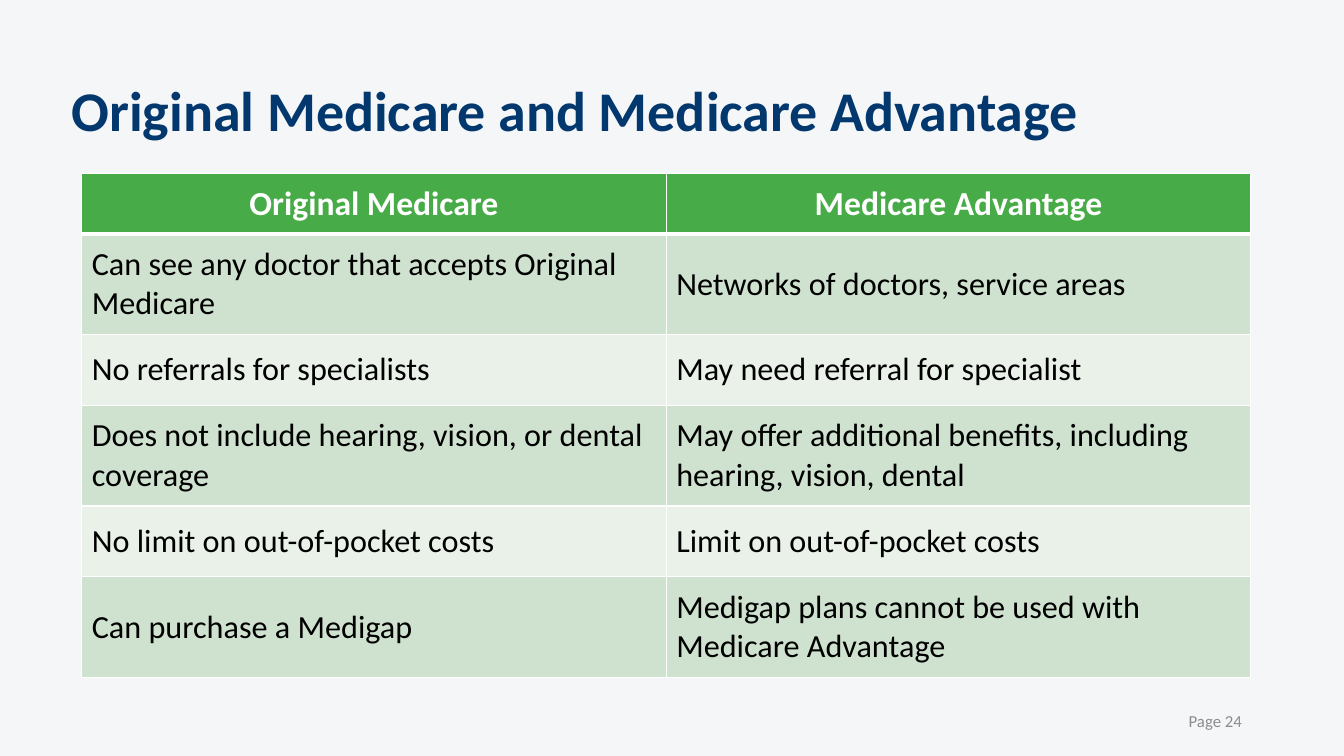
"""Build a slide comparing Original Medicare with Medicare Advantage."""

from dataclasses import dataclass

import lxml.etree
import pptx
import pptx.dml.color
import pptx.enum.text
import pptx.oxml.ns
import pptx.util

Cm = pptx.util.Cm
Pt = pptx.util.Pt
Align = pptx.enum.text.PP_ALIGN
Anchor = pptx.enum.text.MSO_ANCHOR

FONT = "Calibri"
COLORS = {
    "background": "F5F6F8",
    "title": "03386E",
    "page": "8C8C8C",
    "header": "47AB47",
    "header_text": "FFFFFF",
    "band_dark": "CFE2CF",
    "band_light": "E9F1E9",
    "body_text": "000000",
    "border": "FFFFFF",
}


@dataclass(frozen=True)
class TextStyle:
    """Describe the look of a run and its paragraph."""

    size: float
    color: str
    bold: bool = False
    align: Align = Align.LEFT


@dataclass(frozen=True)
class ComparisonRow:
    """Hold one row of the comparison table."""

    original: str
    advantage: str
    height: float


TITLE_STYLE = TextStyle(40, "title", bold=True)
PAGE_STYLE = TextStyle(12, "page", align=Align.RIGHT)
HEADER_STYLE = TextStyle(24, "header_text", bold=True, align=Align.CENTER)
BODY_STYLE = TextStyle(23, "body_text")
COLUMN_WIDTH = 14.73
ROWS = [
    ComparisonRow("Original Medicare", "Medicare Advantage", 1.52),
    ComparisonRow("Can see any doctor that accepts Original Medicare",
                  "Networks of doctors, service areas", 2.54),
    ComparisonRow("No referrals for specialists", "May need referral for specialist", 1.78),
    ComparisonRow("Does not include hearing, vision, or dental coverage",
                  "May offer additional benefits, including hearing, vision, dental", 2.54),
    ComparisonRow("No limit on out-of-pocket costs", "Limit on out-of-pocket costs", 1.78),
    ComparisonRow("Can purchase a Medigap",
                  "Medigap plans cannot be used with Medicare Advantage", 2.54),
]


def color_of(name: str) -> pptx.dml.color.RGBColor:
    """Return the named colour."""
    return pptx.dml.color.RGBColor.from_string(COLORS[name])


def write_text(text_frame: pptx.text.text.TextFrame, text: str, style: TextStyle) -> None:
    """Write one styled run into the first paragraph."""
    paragraph = text_frame.paragraphs[0]
    paragraph.alignment = style.align
    run = paragraph.add_run()
    run.text = text
    run.font.name = FONT
    run.font.size = Pt(style.size)
    run.font.bold = style.bold
    run.font.color.rgb = color_of(style.color)


def set_borders(cell: pptx.table._Cell, top: float, bottom: float) -> None:
    """Draw the borders of a cell, with widths in points."""
    qualified = pptx.oxml.ns.qn
    properties = cell._tc.get_or_add_tcPr()
    widths = {"a:lnL": 1, "a:lnR": 1, "a:lnT": top, "a:lnB": bottom}
    for position, (tag, width) in enumerate(widths.items()):
        line = lxml.etree.Element(qualified(tag), w=str(Pt(width)))
        fill = lxml.etree.SubElement(line, qualified("a:solidFill"))
        lxml.etree.SubElement(fill, qualified("a:srgbClr"), val=COLORS["border"])
        properties.insert(position, line)


def add_title(slide: pptx.slide.Slide) -> None:
    """Place and fill the title placeholder."""
    title = slide.shapes.title
    title.left, title.top = Cm(1.55), Cm(1.02)
    title.width, title.height = Cm(30.48), Cm(3.68)
    title.text_frame.vertical_anchor = Anchor.MIDDLE
    write_text(title.text_frame, "Original Medicare and Medicare Advantage", TITLE_STYLE)
    title.text_frame.paragraphs[0].line_spacing = 0.9


def add_page_label(slide: pptx.slide.Slide) -> None:
    """Add the page label at the lower right."""
    label = slide.shapes.add_textbox(Cm(23.93), Cm(17.65), Cm(7.62), Cm(1.02))
    label.text_frame.word_wrap = True
    label.text_frame.vertical_anchor = Anchor.MIDDLE
    write_text(label.text_frame, "Page 24", PAGE_STYLE)


def add_comparison(slide: pptx.slide.Slide) -> None:
    """Add the comparison table."""
    table = slide.shapes.add_table(
        len(ROWS), 2, Cm(2.06), Cm(4.37),
        Cm(2 * COLUMN_WIDTH), Cm(sum(row.height for row in ROWS)),
    ).table
    for column in table.columns:
        column.width = Cm(COLUMN_WIDTH)
    for index, row in enumerate(ROWS):
        table.rows[index].height = Cm(row.height)
        band = "header" if index == 0 else "band_dark" if index % 2 else "band_light"
        style = BODY_STYLE if index else HEADER_STYLE
        for cell, text in zip(table.rows[index].cells, (row.original, row.advantage)):
            cell.fill.solid()
            cell.fill.fore_color.rgb = color_of(band)
            cell.vertical_anchor = Anchor.MIDDLE
            write_text(cell.text_frame, text, style)
            set_borders(cell, top=3 if index == 1 else 1, bottom=3 if index == 0 else 1)


def main() -> None:
    """Build and save the presentation."""
    presentation = pptx.Presentation()
    presentation.slide_width, presentation.slide_height = Cm(33.87), Cm(19.05)
    slide = presentation.slides.add_slide(presentation.slide_layouts[5])
    slide.background.fill.solid()
    slide.background.fill.fore_color.rgb = color_of("background")
    add_title(slide)
    add_page_label(slide)
    add_comparison(slide)
    presentation.save("out.pptx")


if __name__ == "__main__":
    main()
